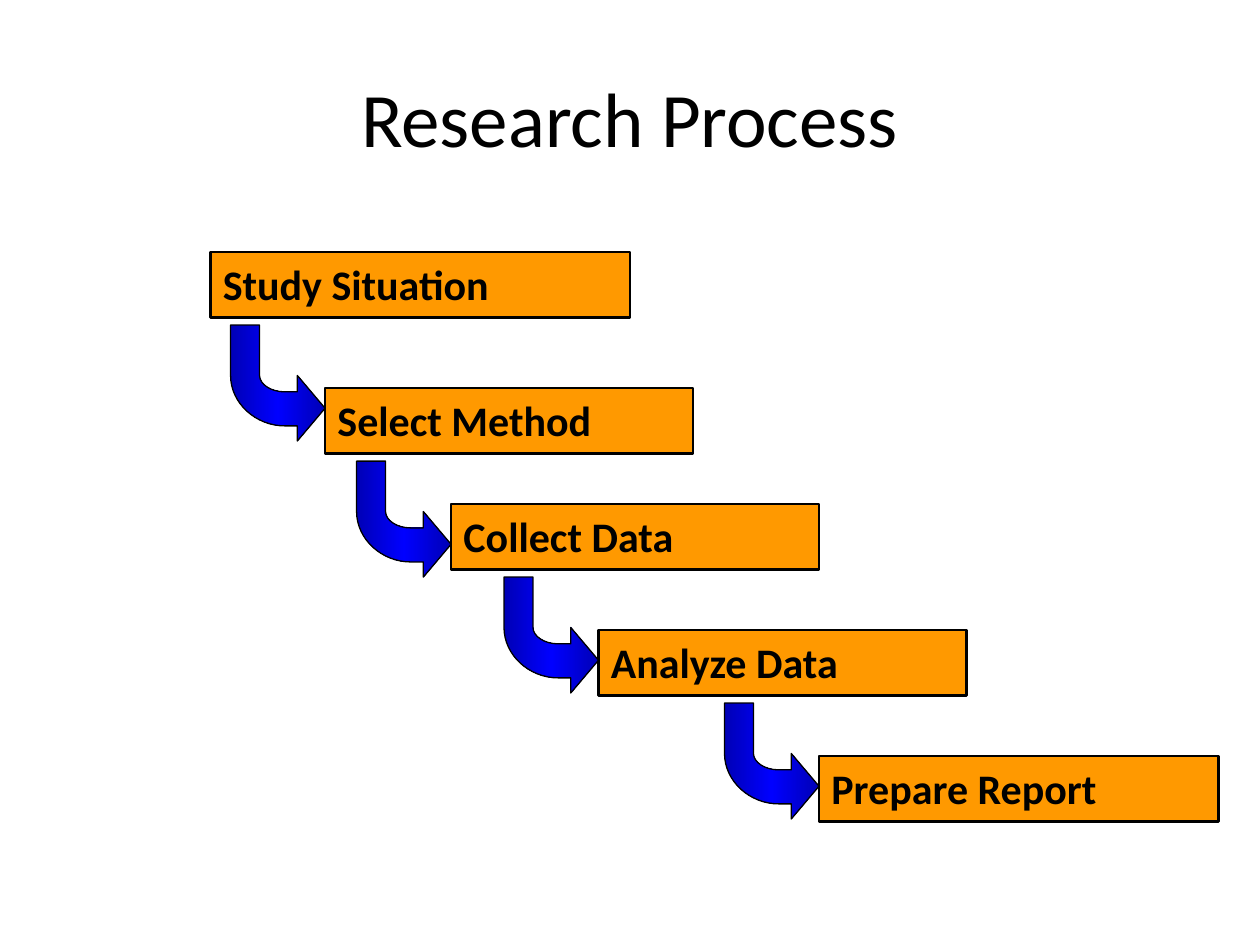
import copy

import pptx
import pptx.dml.color
import pptx.enum.shapes
import pptx.enum.text
import pptx.oxml.ns
import pptx.util
from pptx.util import Inches

BLACK = pptx.dml.color.RGBColor(0x00, 0x00, 0x00)
ORANGE = pptx.dml.color.RGBColor(0xFF, 0x99, 0x00)
NAVY = pptx.dml.color.RGBColor(0x00, 0x00, 0xB6)
BLUE = pptx.dml.color.RGBColor(0x00, 0x00, 0xFF)
FONT = "Calibri"
BOX_HEIGHT = 0.52
ARROW_WIDTH, ARROW_DROP = 0.75, 0.58
ARROW_POINTS = [
    (0.75, 0.66), (0.53, 0.92), (0.53, 0.8), (0.43, 0.8), (0, 0.4), (0, 0),
    (0.23, 0), (0.23, 0.4), (0.43, 0.53), (0.53, 0.53), (0.53, 0.4),
]
BENDS = {4: [(0.2, 0.8), (0, 0.62)], 8: [(0.23, 0.47), (0.32, 0.53)]}
STEPS = [
    ("Study Situation", 1.67, 2, 3.33),
    ("Select Method", 2.58, 3.08, 2.92),
    ("Collect Data", 3.58, 4, 2.92),
    ("Analyze Data", 4.75, 5, 2.92),
    ("Prepare Report", 6.5, 6, 3.17),
]


def format_text(tf, size, bold, align):
    """Style the single paragraph of a text frame."""
    p = tf.paragraphs[0]
    p.alignment = align
    font = p.runs[0].font
    font.name, font.size, font.bold = FONT, pptx.util.Pt(size), bold
    font.color.rgb = BLACK


def set_title(sp, text, left, top, width, height):
    """Place and format the slide title."""
    sp.left, sp.top = Inches(left), Inches(top)
    sp.width, sp.height = Inches(width), Inches(height)
    tf = sp.text_frame
    tf.text = text
    tf.vertical_anchor = pptx.enum.text.MSO_ANCHOR.MIDDLE
    format_text(tf, 44, False, pptx.enum.text.PP_ALIGN.CENTER)


def set_outline(sp, width):
    """Give a shape a black outline and no shadow."""
    sp.shadow.inherit = False
    sp.line.color.rgb = BLACK
    sp.line.width = pptx.util.Pt(width)


def add_step(slide, text, left, top, width, height):
    """Add one orange step box."""
    sp = slide.shapes.add_shape(
        pptx.enum.shapes.MSO_SHAPE.RECTANGLE,
        Inches(left), Inches(top), Inches(width), Inches(height))
    sp.fill.solid()
    sp.fill.fore_color.rgb = ORANGE
    set_outline(sp, 1.5)
    tf = sp.text_frame
    tf.text = text
    tf.word_wrap = True
    tf.auto_size = pptx.enum.text.MSO_AUTO_SIZE.SHAPE_TO_FIT_TEXT
    tf.vertical_anchor = pptx.enum.text.MSO_ANCHOR.TOP
    format_text(tf, 24, True, pptx.enum.text.PP_ALIGN.LEFT)


def round_bends(sp):
    """Turn the bend segments of an arrow outline into Bezier curves."""
    qn = pptx.oxml.ns.qn
    outline = next(sp._element.spPr.iter(qn("a:path" )))
    for index, controls in BENDS.items():
        segment = outline[index]
        segment.tag = qn("a:cubicBezTo")
        end = segment[0]
        for x, y in controls:
            pt = copy.deepcopy(end)
            pt.set("x", str(Inches(x)))
            pt.set("y", str(Inches(y)))
            end.addprevious(pt)


def fill_gradient(sp):
    """Fill a shape from navy through blue back to navy."""
    sp.fill.gradient()
    sp.fill.gradient_angle = 0
    stops = next(sp._element.spPr.iter(pptx.oxml.ns.qn("a:gsLst")))
    stops.append(copy.deepcopy(stops[0]))
    for stop, position, color in zip(
            sp.fill.gradient_stops, (0, 0.5, 1), (NAVY, BLUE, NAVY)):
        stop.position = position
        stop.color.rgb = color


def add_bent_arrow(slide, left, top):
    """Add a blue arrow that runs down and bends to the right."""
    points = [(Inches(left + x), Inches(top + y)) for x, y in ARROW_POINTS]
    builder = slide.shapes.build_freeform(*points[0])
    builder.add_line_segments(points[1:], close=True)
    sp = builder.convert_to_shape()
    round_bends(sp)
    set_outline(sp, 0.75)
    fill_gradient(sp)


def add_process(slide, steps):
    """Add the staircase of steps and the arrows joining them."""
    for text, left, top, width in steps:
        add_step(slide, text, left, top, width, BOX_HEIGHT)
    for (_, _, top, _), (_, next_left, _, _) in zip(steps, steps[1:]):
        add_bent_arrow(slide, next_left - ARROW_WIDTH, top + ARROW_DROP)


def main():
    """Build and save the slide."""
    prs = pptx.Presentation()
    prs.slide_width, prs.slide_height = Inches(10), Inches(7.5)
    slide = prs.slides.add_slide(prs.slide_layouts[5])
    set_title(slide.shapes.title, "Research Process", 0.5, 0.3, 9, 1.25)
    add_process(slide, STEPS)
    prs.save("out.pptx")


if __name__ == "__main__":
    main()
